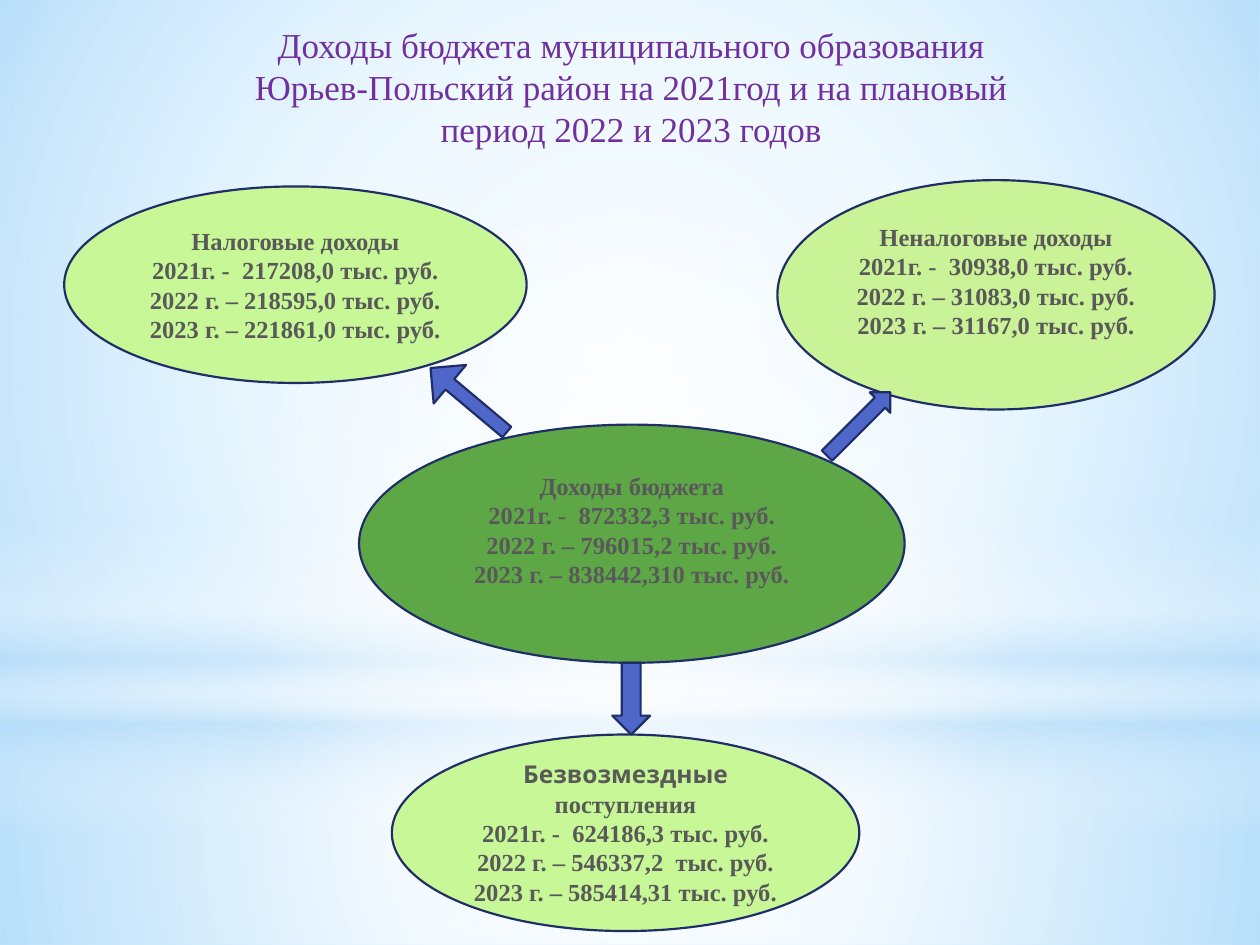
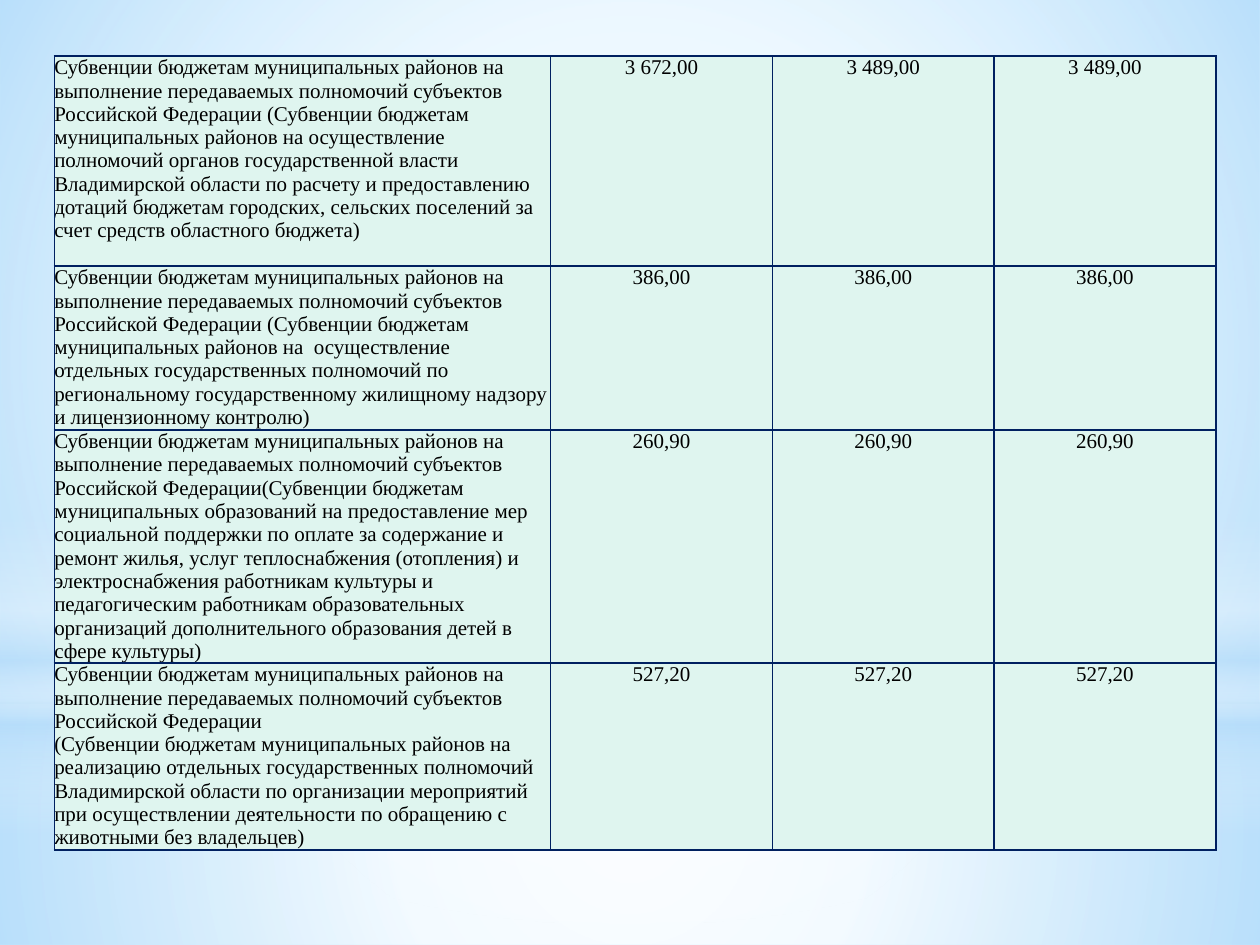
import lxml.etree
import pptx
import pptx.dml.color
import pptx.enum.shapes
import pptx.enum.text
import pptx.oxml
import pptx.oxml.ns
import pptx.util

Pt = pptx.util.Pt
SHAPE = pptx.enum.shapes.MSO_SHAPE
CENTER = pptx.enum.text.PP_ALIGN.CENTER
LEFT = pptx.enum.text.PP_ALIGN.LEFT
MIDDLE = pptx.enum.text.MSO_ANCHOR.MIDDLE
NAMESPACE = pptx.oxml.ns.nsdecls("a")

SERIF = "Times New Roman"
SKY, WHITE, HAZE = "CCECFF", "FFFFFF", "B4DCFA"
PURPLE, GREY, BLACK = "7030A0", "595959", "000000"
LIME, PALE_LIME, GREEN = "C7F797", "CAF297", "5EA747"
ARROW_BLUE, OUTLINE, GRID, MINT = "4E67C8", "1F2E69", "002060", "DFF5EF"

RADIAL = ('<a:path path="circle"><a:fillToRect l="50000" t="50000" '
          'r="50000" b="50000"/></a:path>')
VERTICAL = '<a:lin ang="5400000" scaled="0"/>'

BACKDROP = [
    (SHAPE.RECTANGLE, (0, 401.76, 720, 138.24), RADIAL,
     [(0, WHITE, 91), (37, WHITE, 76), (100, HAZE, 79)]),
    (SHAPE.RECTANGLE, (0, 0, 720, 401.76), RADIAL,
     [(0, WHITE, 89), (48, WHITE, 62), (100, HAZE, 79)]),
    (SHAPE.RECTANGLE, (0, 296.64, 720, 180), VERTICAL,
     [(0, WHITE, 0), (29, WHITE, 30), (45, HAZE, 40),
      (55, WHITE, 26), (65, HAZE, 60), (100, WHITE, 0)]),
    (SHAPE.OVAL, (0, 126, 720, 401.76), RADIAL,
     [(0, WHITE, 100), (56, WHITE, 0)]),
]

HEADING = [
    "Доходы бюджета муниципального образования",
    "Юрьев-Польский район на 2021год и на плановый",
    "период 2022 и 2023 годов",
]

SUBVENTION = ("Субвенции бюджетам муниципальных районов на выполнение "
              "передаваемых полномочий субъектов Российской Федерации")
SUBVENTIONS = [
    (120, SUBVENTION + " (Субвенции бюджетам муниципальных районов на "
     "осуществление полномочий органов государственной власти Владимирской "
     "области по расчету и предоставлению дотаций бюджетам городских, "
     "сельских поселений за счет средств областного бюджета)",
     ["3 672,00", "3 489,00", "3 489,00"]),
    (93.6, SUBVENTION + " (Субвенции бюджетам муниципальных районов на  "
     "осуществление отдельных государственных полномочий по региональному "
     "государственному жилищному надзору и лицензионному контролю)",
     ["386,00"] * 3),
    (133.2, SUBVENTION + "(Субвенции бюджетам муниципальных образований на "
     "предоставление мер социальной поддержки по оплате за содержание и "
     "ремонт жилья, услуг теплоснабжения (отопления) и электроснабжения "
     "работникам культуры и педагогическим работникам образовательных "
     "организаций дополнительного образования детей в сфере культуры)",
     ["260,90"] * 3),
    (106.8, SUBVENTION + "\n(Субвенции бюджетам муниципальных районов на "
     "реализацию отдельных государственных полномочий Владимирской области "
     "по организации мероприятий при осуществлении деятельности по "
     "обращению с животными без владельцев)",
     ["527,20"] * 3),
]


def color(hex_code):
    return pptx.dml.color.RGBColor.from_string(hex_code)


def paint(target, hex_code):
    target.solid()
    target.fore_color.rgb = color(hex_code)


def style(frame, size, hex_code, bold=False, align=CENTER, leading=None):
    for paragraph in frame.paragraphs:
        paragraph.alignment = align
        if leading:
            paragraph.line_spacing = Pt(leading)
        paragraph.font.name = SERIF
        paragraph.font.size = Pt(size)
        paragraph.font.bold = bold
        paragraph.font.color.rgb = color(hex_code)


def add_plain_shape(slide, kind, box):
    shape = slide.shapes.add_shape(kind, *map(Pt, box))
    shape.shadow.inherit = False
    return shape


def add_outlined_shape(slide, kind, box, fill):
    shape = add_plain_shape(slide, kind, box)
    paint(shape.fill, fill)
    paint(shape.line.fill, OUTLINE)
    shape.line.width = Pt(1.25)
    return shape


def set_gradient(shape, direction, stops):
    shape.fill.solid()
    solid = shape.element.spPr.find(pptx.oxml.ns.qn("a:solidFill"))
    stop_list = "".join(
        f'<a:gs pos="{position * 1000}"><a:srgbClr val="{hex_code}">'
        f'<a:alpha val="{opacity * 1000}"/></a:srgbClr></a:gs>'
        for position, hex_code, opacity in stops)
    gradient = pptx.oxml.parse_xml(
        f'<a:gradFill {NAMESPACE} rotWithShape="1"><a:gsLst>{stop_list}'
        f'</a:gsLst>{direction}</a:gradFill>')
    solid.getparent().replace(solid, gradient)


def add_backdrop(master, slide):
    paint(master.background.fill, SKY)
    for order, (kind, box, direction, stops) in enumerate(BACKDROP):
        glow = add_plain_shape(slide, kind, box)
        glow.line.fill.background()
        set_gradient(glow, direction, stops)
        glow.element.nvSpPr.cNvPr.set("id", str(100 + order))
        master.shapes.element.insert(2 + order, glow.element)


def add_heading(slide, lines):
    heading = slide.shapes.title
    heading.left, heading.top = Pt(36.72), Pt(10)
    heading.width, heading.height = Pt(648), Pt(79)
    frame = heading.text_frame
    frame.text = "\n".join(lines)
    frame.auto_size = pptx.enum.text.MSO_AUTO_SIZE.NONE
    frame.vertical_anchor = MIDDLE
    style(frame, 20, PURPLE, leading=24)


def add_income(slide, kind, box, fill, lines, lift=0):
    income = add_outlined_shape(slide, kind, box, fill)
    frame = income.text_frame
    frame.word_wrap = True
    frame.vertical_anchor = MIDDLE
    frame.margin_bottom = Pt(3.6 + lift)
    frame.text = "\n".join(lines)
    style(frame, 14, GREY, bold=True, leading=16.8)
    return frame


def add_arrow(slide, kind, box, rotation=0):
    arrow = add_outlined_shape(slide, kind, box, ARROW_BLUE)
    arrow.rotation = rotation
    return arrow


def fill_cell(cell, text, align):
    cell.text = text
    cell.margin_left = cell.margin_right = 0
    cell.margin_top = cell.margin_bottom = 0
    properties = cell._tc.get_or_add_tcPr()
    for side in "LRTB":
        properties.append(pptx.oxml.parse_xml(
            f'<a:ln{side} {NAMESPACE} w="12700"><a:solidFill>'
            f'<a:srgbClr val="{GRID}"/></a:solidFill></a:ln{side}>'))
    paint(cell.fill, MINT)
    style(cell.text_frame, 12, BLACK, align=align)


def add_subventions(slide):
    total_height = sum(height for height, _, _ in SUBVENTIONS)
    table = slide.shapes.add_table(
        len(SUBVENTIONS), 4, Pt(31), Pt(32), Pt(663.8), Pt(total_height)).table
    table.first_row = table.horz_banding = False
    for column, width in zip(table.columns, [283.7] + [126.7] * 3):
        column.width = Pt(width)
    for row, (height, purpose, amounts) in zip(table.rows, SUBVENTIONS):
        row.height = Pt(height)
        purpose_cell, *amount_cells = row.cells
        fill_cell(purpose_cell, purpose, LEFT)
        for cell, amount in zip(amount_cells, amounts):
            fill_cell(cell, amount, CENTER)


def add_income_scheme(slide):
    node = SHAPE.FLOWCHART_CONNECTOR
    add_income(slide, node, (444.24, 102.96, 249.84, 131.04), PALE_LIME, [
        "Неналоговые доходы",
        "2021г. -  30938,0 тыс. руб.",
        "2022 г. – 31083,0 тыс. руб.",
        "2023 г. – 31167,0 тыс. руб."], lift=16)
    add_income(slide, node, (36.72, 106.56, 264.24, 112.32), LIME, [
        "Налоговые доходы",
        "2021г. -  217208,0 тыс. руб.",
        "2022 г. – 218595,0 тыс. руб.",
        "2023 г. – 221861,0 тыс. руб."])
    grants = add_income(slide, node, (223.92, 419.76, 267.12, 112.32), LIME, [
        "Безвозмездные ",
        "2021г. -  624186,3 тыс. руб.",
        "2022 г. – 546337,2  тыс. руб.",
        "2023 г. – 585414,31 тыс. руб."])
    grants_name = grants.paragraphs[0]
    grants_name.runs[0].font.name = "Cabin"
    grants_name.add_run().text = "поступления"
    add_income(slide, SHAPE.OVAL, (205.2, 242.64, 311.76, 136.08), GREEN, [
        "Доходы бюджета",
        "2021г. -  872332,3 тыс. руб.",
        "2022 г. – 796015,2 тыс. руб.",
        "2023 г. – 838442,310 тыс. руб."], lift=16)
    to_taxes = add_arrow(
        slide, SHAPE.UP_ARROW, (253.44, 200.16, 28.8, 56.88), 310)
    to_taxes.adjustments[0] = 0.27
    add_arrow(slide, SHAPE.RIGHT_ARROW, (465.12, 234, 51.12, 16.56), 315)
    add_arrow(slide, SHAPE.DOWN_ARROW, (349.92, 378.72, 21.6, 41.04))


def main():
    deck = pptx.Presentation()
    deck.slide_width, deck.slide_height = Pt(720), Pt(540)
    income_slide = deck.slides.add_slide(deck.slide_layouts[5])
    add_backdrop(deck.slide_master, income_slide)
    add_heading(income_slide, HEADING)
    add_income_scheme(income_slide)
    add_subventions(deck.slides.add_slide(deck.slide_layouts[6]))
    deck.save("out.pptx")


if __name__ == "__main__":
    main()
